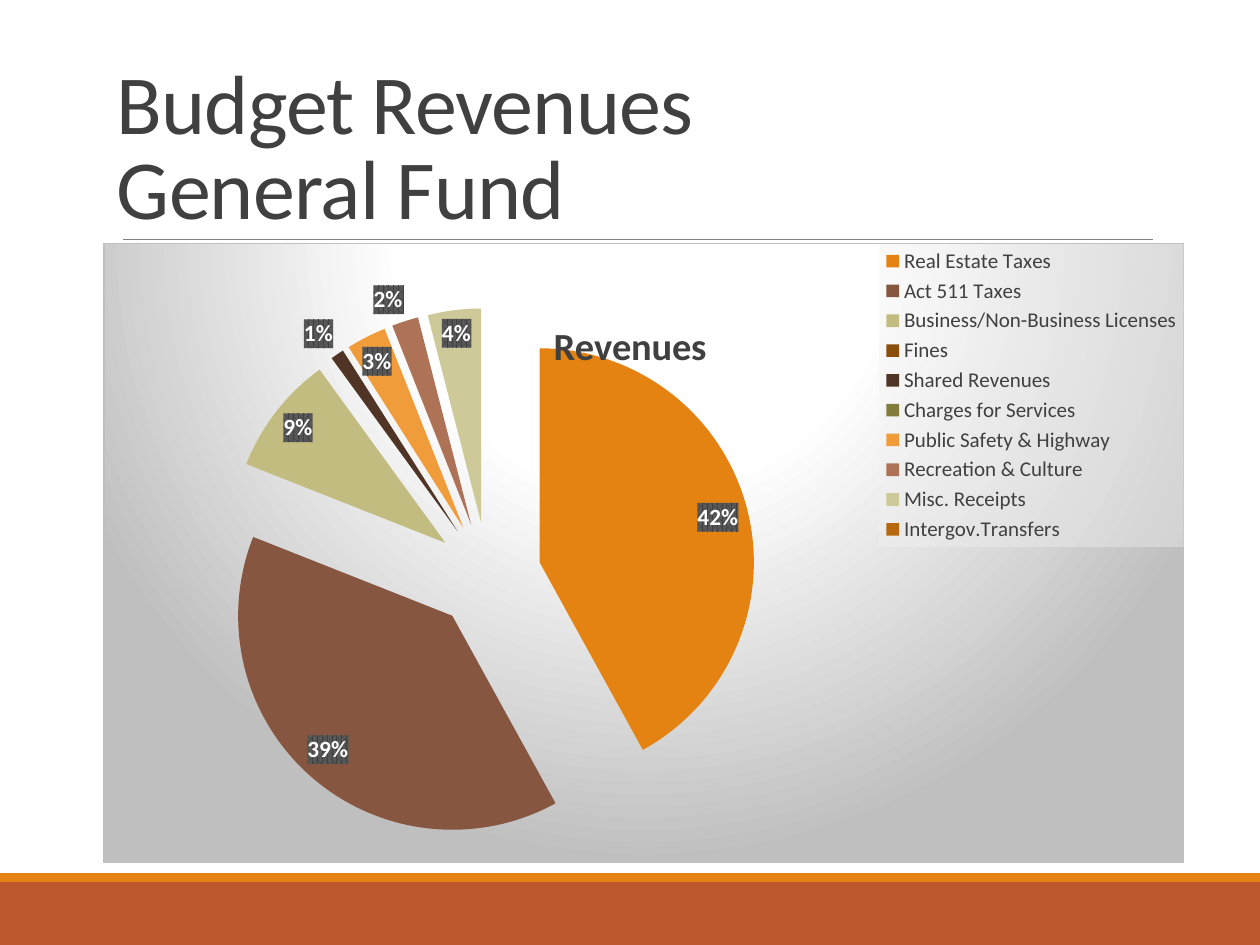
from lxml import etree
from pptx import Presentation, util as u
from pptx.chart.data import CategoryChartData
from pptx.dml.color import RGBColor
from pptx.enum import chart as ch, shapes, text
from pptx.oxml import parse_xml
from pptx.oxml.ns import nsdecls, qn

HEADING = "Budget Revenues\vGeneral Fund"
REVENUES_NAME = "Revenues"
REVENUES = [
    ("Real Estate Taxes", 42, "E48312"),
    ("Act 511 Taxes", 39, "865640"),
    ("Business/Non-Business Licenses", 9, "C2BC80"),
    ("Fines", 0, "894F0B"),
    ("Shared Revenues", 1, "503426"),
    ("Charges for Services", 0, "837C3F"),
    ("Public Safety & Highway", 3, "F09C3B"),
    ("Recreation & Culture", 2, "AE7256"),
    ("Misc. Receipts", 4, "CEC999"),
    ("Intergov.Transfers", 0, "B6690E"),
]
UNLABELLED = len(REVENUES) - 1

THEME = {
    "font": "Calibri", "ink": "404040", "paper": "FFFFFF", "rule": "808080",
    "edge": "BFBFBF", "hatch": "595959", "panel": "F2F2F2",
    "heading": 48, "chart_title": 22, "legend": 12, "label": 13.3, "base": 10,
}
BANDS = [((0, 7 / 7.5, 1, 0.5 / 7.5), "BD582C"),
         ((0, 6.93 / 7.5, 1, 0.07 / 7.5), "E48312")]
HEADING_BOX = (0.083, 0.17 / 7.5, 0.825, 1.76 / 7.5)
RULE_BOX = (0.098, 1.9 / 7.5, 0.817, 0)
CHART_BOX = (0.082, 1.93 / 7.5, 0.858, 4.92 / 7.5)
PLOT_SHARE = (0.01, 0.104, 0.691, 0.865)
TITLE_SHARE = (0.41, 0.11)
LEGEND_SHARE = (0.718, 0, 0.282, 0.49)

deck = Presentation()
deck.slide_width, deck.slide_height = u.Inches(10), u.Inches(7.5)
slide = deck.slides.add_slide(deck.slide_layouts[6])


def box(shares):
    sides = (deck.slide_width, deck.slide_height) * 2
    return [round(share * side) for share, side in zip(shares, sides)]


def style(font, size, color, bold=False):
    font.name, font.size, font.bold = THEME["font"], u.Pt(size), bold
    font.color.rgb = RGBColor.from_string(color)


def chart_area(body):
    return parse_xml(f'<c:spPr {nsdecls("c", "a")}>{body}</c:spPr>')


def solid(color, extra=""):
    return f'<a:srgbClr val="{color}">{extra}</a:srgbClr>'


def place(part, index, shares, inner=False):
    for old in part.findall(qn("c:layout")):
        part.remove(old)
    target = '<c:layoutTarget val="inner"/>' if inner else ""
    modes = "".join(f'<c:{k}Mode val="edge"/>' for k in "xy")
    values = "".join(f'<c:{k} val="{v}"/>' for k, v in zip("xywh", shares))
    part.insert(index, parse_xml(
        f'<c:layout {nsdecls("c")}><c:manualLayout>{target}{modes}{values}'
        '</c:manualLayout></c:layout>'))


for band_box, color in BANDS:
    band = slide.shapes.add_shape(shapes.MSO_SHAPE.RECTANGLE, *box(band_box))
    band.shadow.inherit = False
    band.fill.solid()
    band.fill.fore_color.rgb = RGBColor.from_string(color)
    band.line.fill.background()

x, y, w, h = box(RULE_BOX)
rule = slide.shapes.add_connector(shapes.MSO_CONNECTOR.STRAIGHT, x, y, x + w, y + h)
rule.line.color.rgb = RGBColor.from_string(THEME["rule"])
rule.line.width = u.Pt(0.5)
etree.SubElement(rule.element.spPr, qn("a:effectLst"))

heading = slide.shapes.add_textbox(*box(HEADING_BOX)).text_frame
heading.word_wrap = True
heading.vertical_anchor = text.MSO_ANCHOR.BOTTOM
heading.text = HEADING
heading.paragraphs[0].line_spacing = 0.85
for run in heading.paragraphs[0].runs:
    style(run.font, THEME["heading"], THEME["ink"])
    run.font.element.set("spc", "-50") if hasattr(run.font, "element") else run._r.get_or_add_rPr().set("spc", "-50")

budget = CategoryChartData()
budget.categories = [name for name, _, _ in REVENUES]
budget.add_series(REVENUES_NAME, [value for _, value, _ in REVENUES])
chart = slide.shapes.add_chart(ch.XL_CHART_TYPE.PIE, *box(CHART_BOX), budget).chart
style(chart.font, THEME["base"], "000000")

chart.has_title = True
chart.chart_title.text_frame.text = REVENUES_NAME
style(chart.chart_title.text_frame.paragraphs[0].runs[0].font,
      THEME["chart_title"], THEME["ink"], True)
chart.has_legend = True
chart.legend.position = ch.XL_LEGEND_POSITION.CORNER
chart.legend.include_in_layout = False
style(chart.legend.font, THEME["legend"], THEME["ink"])

pie = chart.plots[0]
pie.vary_by_categories = True
slices = pie.series[0]
for index, (_, _, color) in enumerate(REVENUES):
    fill = slices.points[index].format.fill
    fill.solid()
    fill.fore_color.rgb = RGBColor.from_string(color)
explosion = parse_xml(f'<c:explosion {nsdecls("c")} val="25"/>')
slices._element.find(qn("c:dPt")).addprevious(explosion)
for point in slices._element.findall(qn("c:dPt")):
    point.find(qn("c:spPr")).addprevious(
        parse_xml(f'<c:explosion {nsdecls("c")} val="25"/>'))

labels = slices.data_labels
labels.show_percentage, labels.show_value = True, False
labels.number_format, labels.number_format_is_linked = "0%", False
labels.position = ch.XL_LABEL_POSITION.BEST_FIT
style(labels.font, THEME["label"], THEME["paper"], True)
label_parts = labels._element
label_parts.find(qn("c:numFmt")).addnext(chart_area(
    f'<a:pattFill prst="pct75"><a:fgClr>{solid(THEME["ink"])}</a:fgClr>'
    f'<a:bgClr>{solid(THEME["hatch"])}</a:bgClr></a:pattFill>'))
label_parts.insert(0, parse_xml(
    f'<c:dLbl {nsdecls("c")}><c:idx val="{UNLABELLED}"/><c:delete val="1"/></c:dLbl>'))

space = chart._chartSpace
chart_root = space.find(qn("c:chart"))
legend = chart_root.find(qn("c:legend"))
place(chart_root.find(qn("c:plotArea")), 0, PLOT_SHARE, inner=True)
place(chart_root.find(qn("c:title")), 1, TITLE_SHARE)
place(legend, 1, LEGEND_SHARE)
panel = solid(THEME["panel"], '<a:alpha val="39000"/>')
legend.find(qn("c:txPr")).addprevious(
    chart_area(f"<a:solidFill>{panel}</a:solidFill>"))
stops = "".join(
    f'<a:gs pos="{at * 1000}">{solid(color)}</a:gs>'
    for at, color in [(0, THEME["paper"]), (39, THEME["paper"]), (100, THEME["edge"])])
chart_root.addnext(chart_area(
    f'<a:gradFill><a:gsLst>{stops}</a:gsLst><a:path path="circle">'
    '<a:fillToRect l="50000" t="-80000" r="50000" b="180000"/></a:path></a:gradFill>'
    f'<a:ln w="9525"><a:solidFill>{solid(THEME["edge"])}</a:solidFill></a:ln>'))

deck.save("out.pptx")
